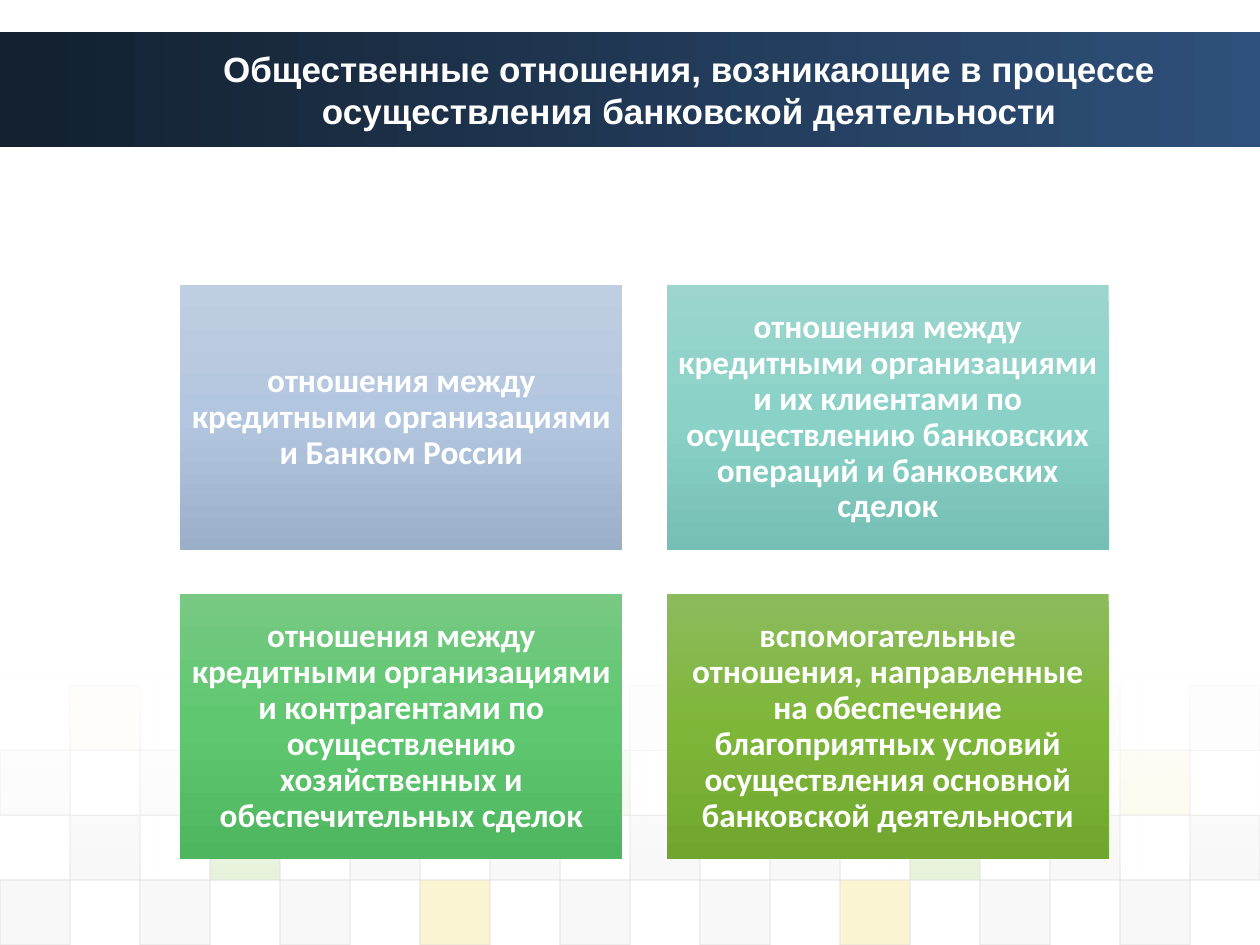
from dataclasses import dataclass

from lxml.etree import SubElement
from pptx import Presentation
from pptx.dml.color import RGBColor
from pptx.enum.shapes import MSO_SHAPE
from pptx.enum.text import MSO_ANCHOR, MSO_AUTO_SIZE, PP_ALIGN
from pptx.oxml.ns import qn
from pptx.util import Inches, Pt


@dataclass(frozen=True)
class Theme:
    white: str = "FFFFFF"
    banner: tuple = ((0, "13202F"), (100, "2E507A"))
    fade: tuple = ((0, "FFFFFF", 90), (100, "FFFFFF", 0))
    tile_line: str = "DDDDDD"
    title_font: str = "Arial"
    title_size: int = 20
    card_font: str = "Calibri"
    card_size: int = 19


THEME = Theme()
TILE_COLORS = {"D": "DDDDDD", "E": "EAEAEA", "Y": "EFC821", "G": "8AC246"}

# Tile rows: first column, opacity in percent, colour of every second column
TILE_ROWS = [
    (1, 5, "YEEYDYEGE"),
    (0, 10, "DDDDGDDDY"),
    (1, 20, "DGDDDDGDD"),
    (0, 20, "DDDYDDYDD"),
]

# Cards: text and the colours at the top, middle and bottom
CARDS = [
    ("отношения между кредитными организациями и Банком России",
     ("BFCEE2", "B3C6DF", "9CAFC9")),
    ("отношения между кредитными организациями и их клиентами по "
     "осуществлению банковских операций и банковских сделок",
     ("9BD5CD", "8AD2C8", "76BFB5")),
    ("отношения между кредитными организациями и контрагентами по "
     "осуществлению хозяйственных и обеспечительных сделок",
     ("77C983", "5EC76F", "4EB65F")),
    ("вспомогательные отношения, направленные на обеспечение благоприятных "
     "условий осуществления основной банковской деятельности",
     ("8CBB5D", "7EB639", "70A62E")),
]


def set_opacity(color_element, percent):
    SubElement(color_element, qn("a:alpha"), val=str(percent * 1000))


def add_rect(slide, left, top, width, height):
    rect = slide.shapes.add_shape(MSO_SHAPE.RECTANGLE, Inches(left), Inches(top),
                                  Inches(width), Inches(height))
    rect.shadow.inherit = False
    rect.line.fill.background()
    return rect


def fill_gradient(shape, stops, angle):
    shape.fill.gradient()
    shape.fill.gradient_angle = angle
    stop_list = shape._element.spPr.find(qn("a:gradFill")).find(qn("a:gsLst"))
    for old_stop in list(stop_list):
        stop_list.remove(old_stop)
    for position, color, *opacity in stops:
        stop = SubElement(stop_list, qn("a:gs"), pos=str(position * 1000))
        color_element = SubElement(stop, qn("a:srgbClr"), val=color)
        if opacity:
            set_opacity(color_element, opacity[0])


def write_text(frame, text, font, size):
    frame.word_wrap = True
    frame.auto_size = MSO_AUTO_SIZE.NONE
    frame.vertical_anchor = MSO_ANCHOR.MIDDLE
    paragraph = frame.paragraphs[0]
    paragraph.alignment = PP_ALIGN.CENTER
    run = paragraph.add_run()
    run.text = text
    run.font.name = font
    run.font.size = Pt(size)
    run.font.bold = True
    run.font.color.rgb = RGBColor.from_string(THEME.white)
    return paragraph


def add_banner(slide, left, top, width, height):
    banner = add_rect(slide, left, top, width, height)
    fill_gradient(banner, THEME.banner, 0)

    # The title goes in front of the banner
    title = slide.shapes.title
    slide.shapes._spTree.append(title._element)
    title.left, title.top = Inches(left + 1.14), Inches(top)
    title.width, title.height = Inches(8.66), Inches(height)
    write_text(title.text_frame,
               "Общественные отношения, возникающие в процессе "
               "осуществления банковской деятельности",
               THEME.title_font, THEME.title_size)


def add_tiles(slide, left, top, width, height):
    tile_width = width / 18
    tile_height = height / len(TILE_ROWS)
    for row, (first_column, opacity, colors) in enumerate(TILE_ROWS):
        for index, key in enumerate(colors):
            column = first_column + 2 * index
            tile = add_rect(slide, left + column * tile_width,
                            top + row * tile_height, tile_width, tile_height)
            tile.fill.solid()
            tile.fill.fore_color.rgb = RGBColor.from_string(TILE_COLORS[key])
            tile.line.color.rgb = RGBColor.from_string(THEME.tile_line)
            tile.line.width = Pt(0.75)
            properties = tile._element.spPr
            for fill, percent in ((properties.find(qn("a:solidFill")), opacity),
                                  (properties.ln.find(qn("a:solidFill")), 60)):
                set_opacity(fill[0], percent)

    # White veil that fades out towards the bottom
    veil = add_rect(slide, left, 5.37, width, 1.62)
    fill_gradient(veil, THEME.fade, 270)


def add_cards(slide, left, top, width, height, gap=0.35):
    card_width = (width - gap) / 2
    card_height = (height - gap) / 2
    for index, (text, colors) in enumerate(CARDS):
        row, column = divmod(index, 2)
        card = add_rect(slide, left + column * (card_width + gap),
                        top + row * (card_height + gap), card_width, card_height)
        fill_gradient(card, list(zip((0, 50, 100), colors)), 270)
        frame = card.text_frame
        frame.margin_left = frame.margin_right = Inches(0.08)
        frame.margin_top = frame.margin_bottom = Inches(0.08)
        paragraph = write_text(frame, text, THEME.card_font, THEME.card_size)
        paragraph.line_spacing = 0.9


def main():
    presentation = Presentation()
    presentation.slide_width = Inches(10)
    presentation.slide_height = Inches(7.5)
    slide = presentation.slides.add_slide(presentation.slide_layouts[5])
    add_tiles(slide, 0, 5.44, 10, 2.06)
    add_banner(slide, 0, 0.25, 10, 0.92)
    add_cards(slide, 1.43, 2.26, 7.37, 4.56)
    presentation.save("out.pptx")


if __name__ == "__main__":
    main()
